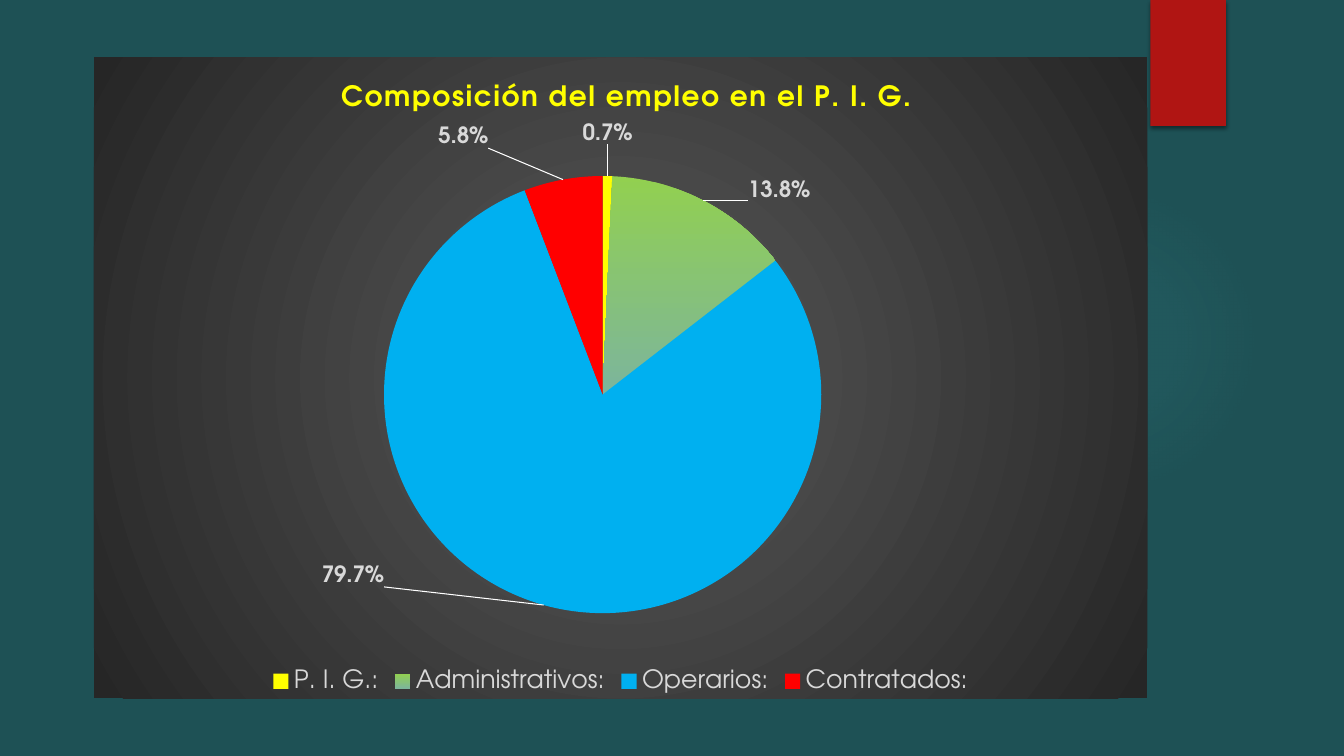
"""Build the slide with the pie chart of employment in the P. I. G."""
from lxml.etree import fromstring
from pptx import Presentation
from pptx.chart.data import CategoryChartData
from pptx.dml.color import RGBColor
from pptx.enum.chart import XL_CHART_TYPE as ChartType
from pptx.enum.chart import XL_LABEL_POSITION as LabelPos
from pptx.enum.chart import XL_LEGEND_POSITION as LegendPos
from pptx.enum.shapes import MSO_SHAPE as Preset
from pptx.oxml.ns import nsdecls, qn
from pptx.util import Inches, Pt

TEAL = RGBColor(0x1E, 0x51, 0x55)
AQUA = RGBColor(0x50, 0xB9, 0xC1)
CRIMSON = RGBColor(0xB0, 0x15, 0x13)
WHITE = RGBColor(0xFF, 0xFF, 0xFF)
PALE = RGBColor(0xD9, 0xD9, 0xD9)
GREY = RGBColor(0x59, 0x59, 0x59)
CHARCOAL = RGBColor(0x26, 0x26, 0x26)
YELLOW = RGBColor(0xFF, 0xFF, 0x00)
GREEN = RGBColor(0x92, 0xD0, 0x50)
SAGE = RGBColor(0x7C, 0xB5, 0x9C)
BLUE = RGBColor(0x00, 0xB0, 0xF0)
RED = RGBColor(0xFF, 0x00, 0x00)

STAFF = [
    ("P. I. G.:", 0.007, (YELLOW,), (0, -0.04)),
    ("Administrativos:", 0.138, (GREEN, SAGE), (0.04, 0.01)),
    ("Operarios:", 0.797, (BLUE,), (-0.15, -0.07)),
    ("Contratados:", 0.058, (RED,), (-0.07, -0.04)),
]


class SlideBuilder:
    """Hold the style and the current slide."""

    font_name = "TeX Gyre Adventor"

    def __init__(self, slide):
        self.slide = slide
        slide.background.fill.solid()
        slide.background.fill.fore_color.rgb = TEAL

    def style(self, font, size, color, bold=False):
        font.name = self.font_name
        font.size = Pt(size)
        font.bold = bold
        font.color.rgb = color

    def radial(self, stops):
        marks = "".join(
            f'<a:gs pos="{at * 1000}"><a:srgbClr val="{color}">'
            f'<a:alpha val="{alpha * 1000}"/></a:srgbClr></a:gs>'
            for at, color, alpha in stops)
        return fromstring(
            f'<a:gradFill {nsdecls("a")} rotWithShape="1"><a:gsLst>{marks}</a:gsLst>'
            '<a:path path="circle"><a:fillToRect l="50000" t="50000" r="50000" '
            'b="50000"/></a:path></a:gradFill>')

    def place(self, element, index, **settings):
        for old in element.findall(qn("c:layout")):
            element.remove(old)
        marks = "".join(f'<c:{key} val="{value}"/>' for key, value in settings.items())
        element.insert(index, fromstring(
            f'<c:layout {nsdecls("c")}><c:manualLayout>{marks}</c:manualLayout></c:layout>'))

    def shape(self, preset, left, top, width, height):
        shape = self.slide.shapes.add_shape(
            preset, Inches(left), Inches(top), Inches(width), Inches(height))
        shape.line.fill.background()
        shape.shadow.inherit = False
        return shape

    def glow(self, left, top, size):
        glow = self.shape(Preset.OVAL, left, top, size, size)
        glow._element.spPr.insert(
            2, self.radial([(0, AQUA, 7), (36, AQUA, 6), (69, AQUA, 0)]))

    def ribbon(self, left, top, width, height):
        ribbon = self.shape(Preset.RECTANGLE, left, top, width, height)
        ribbon.fill.solid()
        ribbon.fill.fore_color.rgb = CRIMSON
        ribbon._element.spPr.find(qn("a:effectLst")).append(fromstring(
            f'<a:outerShdw {nsdecls("a")} blurRad="{Pt(3)}" dist="{Pt(2)}" dir="5400000">'
            '<a:srgbClr val="000000"><a:alpha val="45000"/></a:srgbClr></a:outerShdw>'))

    def pie(self, title, staff, left, top, width, height):
        data = CategoryChartData(number_format="0.0%")
        data.categories = [name for name, *_ in staff]
        data.add_series("Series 1", [share for _, share, *_ in staff])
        chart = self.slide.shapes.add_chart(
            ChartType.PIE, Inches(left), Inches(top), Inches(width), Inches(height),
            data).chart
        self.style(chart.font, 10, WHITE)
        self.chart_frame(chart, title)
        plot = chart.plots[0]
        plot.vary_by_categories = True
        series = plot.series[0]
        self.share_labels(series.data_labels)
        for index, (_, _, colors, offset) in enumerate(staff):
            self.slice(series.points[index], colors, offset)

    def chart_frame(self, chart, title):
        heading = chart.chart_title.text_frame.paragraphs[0].add_run()
        heading.text = title
        self.style(heading.font, 20, YELLOW, True)
        heading.font._element.set("spc", "100")
        self.place(chart.chart_title._element, 1, xMode="edge", yMode="edge",
                   x=0.23, y=0.03)
        chart.has_legend = True
        chart.legend.position = LegendPos.BOTTOM
        chart.legend.include_in_layout = False
        self.style(chart.legend.font, 18, PALE)
        body = chart._chartSpace.find(qn("c:chart"))
        self.place(body.find(qn("c:plotArea")), 0, layoutTarget="inner", xMode="edge",
                   yMode="edge", x=0.077, y=0.185, w=0.812, h=0.682)
        frame = fromstring(f'<c:spPr {nsdecls("c", "a")}><a:ln><a:noFill/></a:ln></c:spPr>')
        frame.insert(0, self.radial([(0, GREY, 100), (100, CHARCOAL, 100)]))
        body.addnext(frame)

    def share_labels(self, labels):
        labels.show_value = True
        labels.number_format = "0.0%"
        labels.number_format_is_linked = False
        labels.position = LabelPos.OUTSIDE_END
        self.style(labels.font, 16, PALE, True)
        element = labels._element
        for old in element.findall(qn("c:showLeaderLines")):
            element.remove(old)
        element.append(fromstring(f'<c:showLeaderLines {nsdecls("c")} val="1"/>'))
        element.append(fromstring(
            f'<c:leaderLines {nsdecls("c", "a")}><c:spPr><a:ln w="{Pt(0.75)}"><a:solidFill>'
            f'<a:srgbClr val="{WHITE}"/></a:solidFill></a:ln></c:spPr></c:leaderLines>'))

    def slice(self, point, colors, offset):
        fill = point.format.fill
        if len(colors) == 1:
            fill.solid()
            fill.fore_color.rgb = colors[0]
        else:
            fill.gradient()
            fill.gradient_angle = 270
            for stop, color in zip(fill.gradient_stops, colors):
                stop.color.rgb = color
        point.format.line.fill.background()
        label = point.data_label
        label.position = LabelPos.OUTSIDE_END
        self.style(label.font, 16, PALE, True)
        x, y = offset
        self.place(label.font._element.getparent().getparent().getparent().getparent(),
                   1, x=x, y=y)


def main():
    deck = Presentation()
    deck.slide_width, deck.slide_height = Inches(13.33), Inches(7.5)
    builder = SlideBuilder(deck.slides.add_slide(deck.slide_layouts[6]))
    builder.glow(9.41, 1.83, 3.08)
    builder.ribbon(11.41, 0, 0.75, 1.25)
    builder.pie("Composición del empleo en el P. I. G.", STAFF, 0.93, 0.57, 10.45, 6.36)
    deck.save("out.pptx")


if __name__ == "__main__":
    main()
